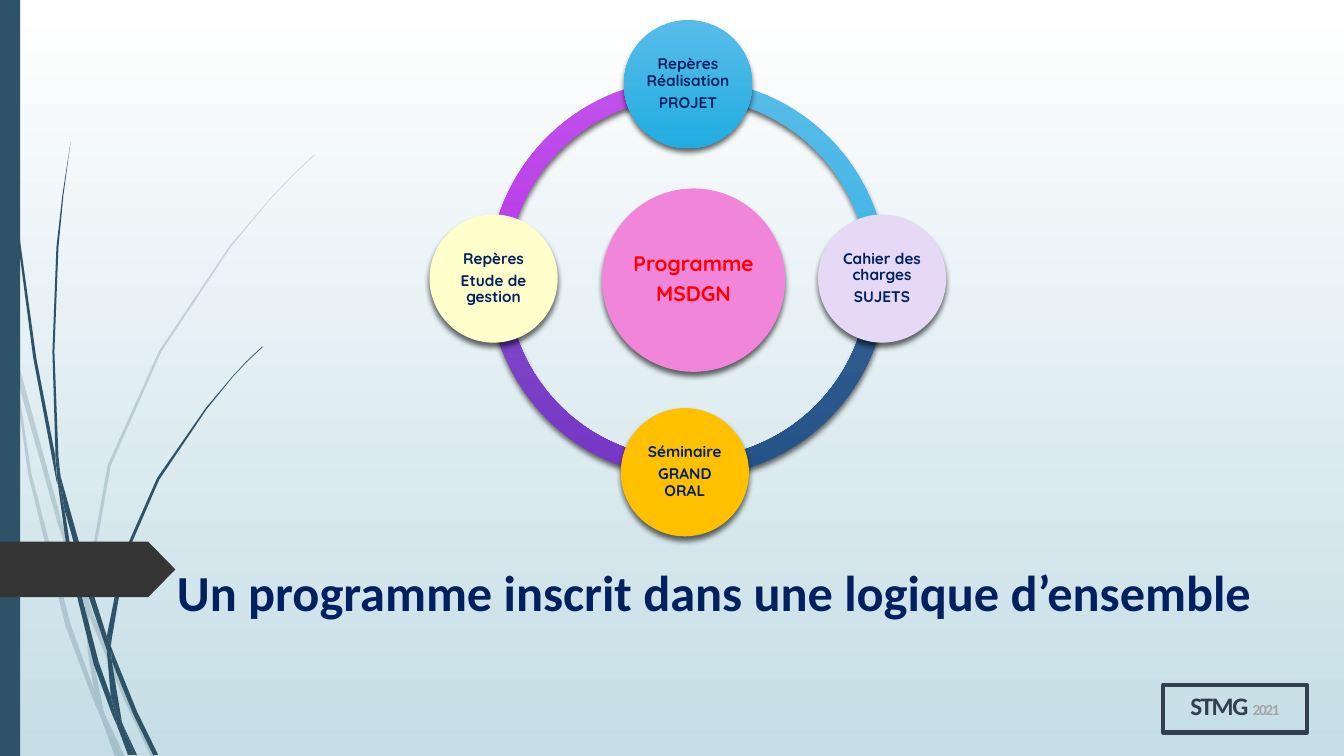
from lxml.etree import SubElement
from pptx import Presentation
from pptx.dml.color import RGBColor
from pptx.enum.shapes import MSO_SHAPE
from pptx.enum.text import MSO_ANCHOR, PP_ALIGN
from pptx.oxml.ns import qn
from pptx.util import Cm, Pt

# Content
TITLE = "Un programme inscrit dans une logique d’ensemble"
HUB = (["Programme", "MSDGN"], (17.48, 7.06), 4.62, 15, ["pink"], "red")
SATELLITES = [  # lines, centre in cm, fill
    (["Repères Réalisation", "PROJET"], (17.34, 2.12), ["sky", "azure"]),
    (["Cahier des charges", "SUJETS"], (22.23, 7.02), ["lilac"]),
    (["Séminaire", "GRAND ORAL"], (17.26, 11.9), ["amber"]),
    (["Repères", "Etude de gestion"], (12.44, 7.02), ["cream"]),
]
ARCS = [  # start and end angle in degrees, gradient
    (180, 270, ["orchid", "magenta"]),
    (91, 180, ["lavender", "violet"]),
    (0, 91, ["steel", "navy"]),
    (270, 0, ["sky", "azure"]),
]
BADGE = [("STMG ", 18, "slate"), ("2021", 11, "grey")]

COLOURS = {
    "white": "FFFFFF", "mist": "C5DEE5", "petrol": "2E5369", "coal": "353535",
    "orchid": "C052EB", "magenta": "B219E4", "lavender": "8D5ED1", "violet": "7536C4",
    "steel": "496B9E", "navy": "235387", "sky": "57BCE9", "azure": "22ADE2",
    "pink": "F185D9", "lilac": "E5D9F5", "amber": "FFC000", "cream": "FFFFCC",
    "red": "FF0000", "ink": "002060", "slate": "333F50", "grey": "A6A6A6",
}

# Grass blades: x, y corners on a grid of 2.54 cm
GRID = 2.54
PALE_BLADES = [
    [(.11, 3.5), (.09, 3.22), (0, 2.82), (0, 2.99), (.1, 3.44)],
    [(.58, 5.22), (.84, 5.99), (.85, 5.86), (.62, 5.2), (.14, 3.45), (.17, 3.76)],
    [(.92, 6.07), (.88, 5.96), (.88, 6.1), (1.23, 6.94), (1.5, 7.51), (1.55, 7.51), (1.27, 6.92)],
    [(1.19, 7.51), (1.24, 7.51), (1.05, 7.11)],
    [(.93, 6.83), (.7, 6.19), (.31, 4.69), (.17, 3.76), (.11, 3.5), (.28, 4.7), (.65, 6.21),
     (.92, 6.93), (1.01, 7.14), (.99, 7.07)],
    [(.84, 5.99), (.87, 6.46), (.93, 6.83), (.96, 6.92), (1.05, 7.11), (1.03, 7.06),
     (.91, 6.46), (.88, 6.1), (.88, 6.08)],
    [(.88, 5.84), (1.1, 4.62), (1.6, 3.49), (2.29, 2.45), (2.68, 1.98), (2.9, 1.75),
     (3.12, 1.54), (3.12, 1.53), (2.89, 1.75), (2.68, 1.97), (2.28, 2.44), (1.58, 3.48),
     (1.07, 4.61), (.85, 5.84), (.85, 5.86), (.88, 5.96)],
    [(1.01, 7.14), (1.14, 7.51), (1.19, 7.51)],
    [(.88, 6.08), (.88, 6.1), (.88, 5.96), (.85, 5.86), (.84, 5.99)],
    [(.96, 6.92), (.93, 6.83), (.99, 7.07), (1.01, 7.14), (1.19, 7.51), (1.05, 7.11)],
]
DARK_BLADES = [
    [(.07, 1.1), (.17, 2.33), (.33, 3.55), (.56, 4.77), (.57, 4.81), (.55, 4.57), (.55, 4.53),
     (.36, 3.55), (.19, 2.32), (.08, 1.09), (.05, .48), (.04, 0), (.03, 0), (.04, .48)],
    [(.88, 5.92), (1.06, 6.45), (1.06, 6.31), (.93, 5.9), (.6, 4.72), (.64, 5.05)],
    [(1.13, 6.49), (1.1, 6.41), (1.11, 6.56), (1.32, 7.08), (1.52, 7.49), (1.57, 7.49),
     (1.36, 7.06)],
    [(1.1, 6.91), (.98, 6.57), (.72, 5.56), (.64, 5.05), (.57, 4.77), (.68, 5.57), (.93, 6.59),
     (1.11, 7.08), (1.17, 7.22), (1.16, 7.17)],
    [(.6, 4.72), (.58, 4.53), (.54, 3.49), (.58, 2.45), (.63, 1.93), (.7, 1.41), (.62, 1.93),
     (.56, 2.45), (.52, 3.49), (.55, 4.49)],
    [(1.33, 7.49), (1.36, 7.49), (1.22, 7.19)],
    [(.57, 4.77), (.64, 5.05), (.6, 4.72), (.55, 4.49), (.55, 4.53)],
    [(1.11, 6.33), (1.25, 5.52), (1.58, 4.76), (2.05, 4.06), (2.31, 3.74), (2.45, 3.59),
     (2.61, 3.44), (2.6, 3.44), (2.45, 3.58), (2.31, 3.73), (2.04, 4.05), (1.56, 4.74),
     (1.22, 5.51), (1.06, 6.31), (1.1, 6.41)],
    [(1.17, 7.22), (1.27, 7.49), (1.31, 7.49)],
    [(1.06, 6.45), (1.1, 6.91), (1.16, 7.06), (1.22, 7.19), (1.21, 7.16), (1.11, 6.56),
     (1.09, 6.51)],
    [(1.06, 6.45), (1.09, 6.51), (1.11, 6.56), (1.1, 6.41), (1.06, 6.31)],
    [(1.16, 7.06), (1.1, 6.91), (1.16, 7.17), (1.17, 7.22), (1.3, 7.49), (1.33, 7.49),
     (1.22, 7.19)],
]


def rgb(name):
    return RGBColor.from_string(COLOURS[name])


def paint(fill, names):
    """One name gives a solid fill, two give a downward gradient."""
    if len(names) == 1:
        fill.solid()
        fill.fore_color.rgb = rgb(names[0])
        return
    fill.gradient()
    fill.gradient_angle = 270
    for position, (stop, name) in enumerate(zip(fill.gradient_stops, names)):
        stop.position = position
        stop.color.rgb = rgb(name)


def dress(shape, names):
    shape.shadow.inherit = False
    shape.line.fill.background()
    paint(shape.fill, names)


def cast_shadow(shape):
    effects = shape._element.spPr.find(qn("a:effectLst"))
    shadow = SubElement(effects, qn("a:outerShdw"), blurRad=str(Pt(4)), dist=str(Pt(3)),
                        dir="5400000", algn="ctr", rotWithShape="0")
    black = SubElement(shadow, qn("a:srgbClr"), val="000000")
    SubElement(black, qn("a:alpha"), val="60000")


def draw_blade(shapes, corners, opacity):
    outline = [(Cm(x * GRID), Cm(y * GRID)) for x, y in corners]
    builder = shapes.build_freeform(*outline[0])
    builder.add_line_segments(outline[1:], close=True)
    blade = builder.convert_to_shape()
    dress(blade, ["petrol"])
    if opacity < 100:
        colour = blade._element.spPr.find(qn("a:solidFill"))[0]
        SubElement(colour, qn("a:alpha"), val=str(opacity * 1000))


def set_font(font, face, size, ink):
    font.name, font.size, font.bold = face, Pt(size), True
    font.color.rgb = rgb(ink)


def draw_disc(shapes, lines, centre, diameter, size, fill, ink):
    x, y = (Cm(value - diameter / 2) for value in centre)
    disc = shapes.add_shape(MSO_SHAPE.OVAL, x, y, Cm(diameter), Cm(diameter))
    dress(disc, fill)
    cast_shadow(disc)
    frame = disc.text_frame
    frame.word_wrap = True
    frame.vertical_anchor = MSO_ANCHOR.MIDDLE
    frame.margin_left = frame.margin_right = frame.margin_top = frame.margin_bottom = Cm(.05)
    frame.text = "\n".join(lines)
    for paragraph in frame.paragraphs:
        paragraph.alignment = PP_ALIGN.CENTER
        paragraph.line_spacing = .9
        paragraph.space_after = Pt(round(size * .35, 1))
        set_font(paragraph.font, "Quicksand", size, ink)


def main():
    prs = Presentation()
    prs.slide_width, prs.slide_height = Cm(33.87), Cm(19.05)
    slide = prs.slides.add_slide(prs.slide_layouts[5])
    shapes = slide.shapes
    paint(slide.background.fill, ["white", "mist"])

    # Side decoration
    for blades, opacity in ((PALE_BLADES, 20), (DARK_BLADES, 100)):
        for corners in blades:
            draw_blade(shapes, corners, opacity)
    band = shapes.add_shape(MSO_SHAPE.RECTANGLE, 0, 0, Cm(.51), prs.slide_height)
    dress(band, ["petrol"])
    tag = shapes.add_shape(MSO_SHAPE.PENTAGON, 0, Cm(13.65), Cm(4.42), Cm(1.4))
    tag.adjustments[0] = .49
    dress(tag, ["coal"])

    # Ring of four arcs
    for start, end, gradient in ARCS:
        arc = shapes.add_shape(MSO_SHAPE.BLOCK_ARC, Cm(12.32), Cm(1.99), Cm(10.03), Cm(10.03))
        for index, value in enumerate((start * .6, end * .6, .046)):
            arc.adjustments[index] = value
        dress(arc, gradient)
        cast_shadow(arc)

    # Hub and satellites
    draw_disc(shapes, *HUB)
    for lines, centre, fill in SATELLITES:
        draw_disc(shapes, lines, centre, 3.23, 11, fill, "ink")

    # Title
    title = shapes.title
    title.left, title.top, title.width, title.height = Cm(3.4), Cm(13.16), Cm(29.21), Cm(3.68)
    title.text_frame.text = TITLE
    title.text_frame.vertical_anchor = MSO_ANCHOR.MIDDLE
    heading = title.text_frame.paragraphs[0]
    heading.alignment = PP_ALIGN.CENTER
    heading.line_spacing = .9
    set_font(heading.font, "Calibri", 36, "ink")

    # Badge
    badge = shapes.add_shape(MSO_SHAPE.RECTANGLE, Cm(29.31), Cm(17.27), Cm(3.63), Cm(1.19))
    badge.shadow.inherit = False
    badge.fill.background()
    badge.line.color.rgb = rgb("slate")
    badge.line.width = Pt(3)
    badge.text_frame.vertical_anchor = MSO_ANCHOR.TOP
    label = badge.text_frame.paragraphs[0]
    label.alignment = PP_ALIGN.CENTER
    for text, size, ink in BADGE:
        run = label.add_run()
        run.text = text
        set_font(run.font, "Calibri", size, ink)
        run.font._element.set("spc", "-100")

    prs.save("out.pptx")


if __name__ == "__main__":
    main()
